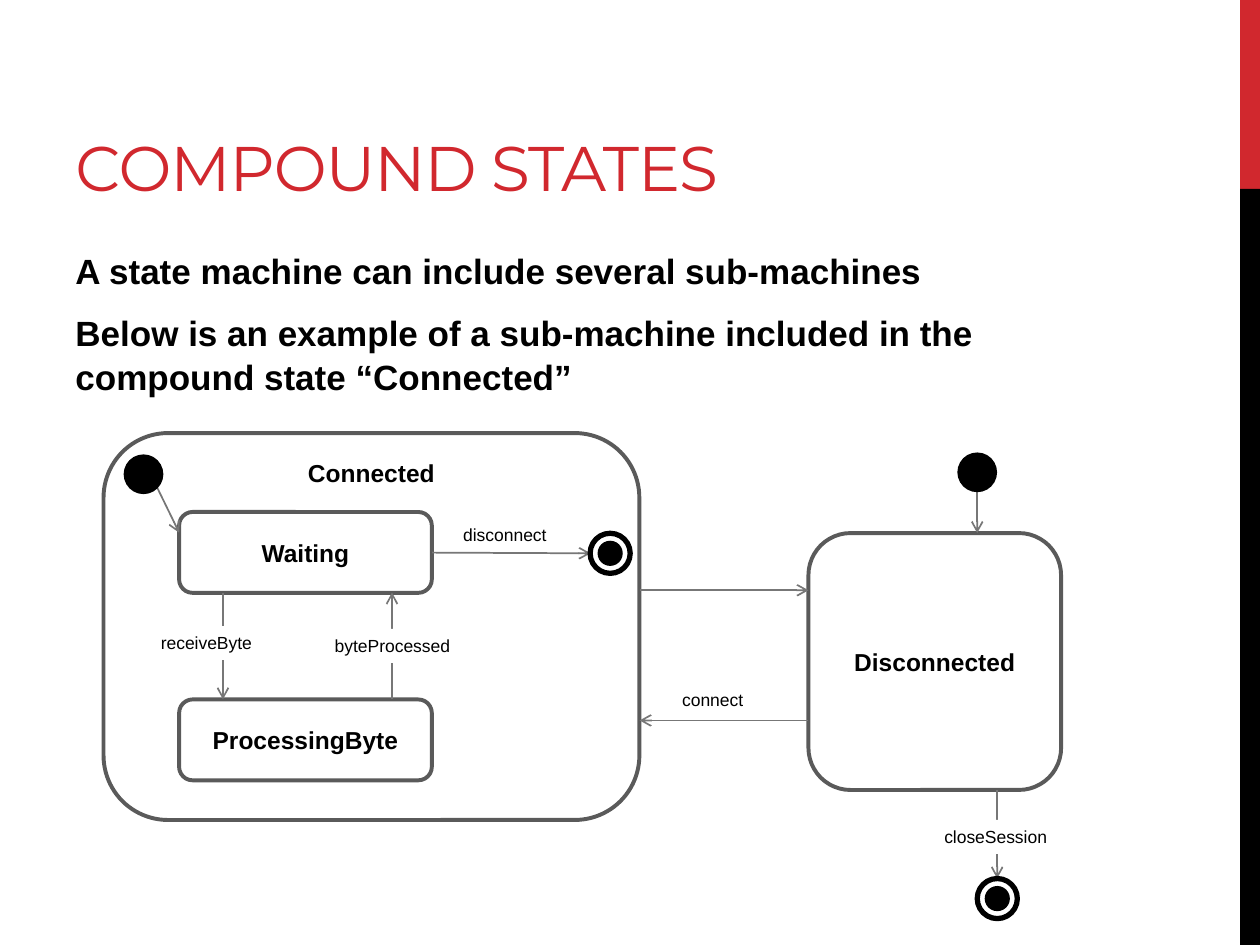
"""Build the compound states slide with its state machine diagram."""
from dataclasses import dataclass
from typing import NamedTuple

from lxml.etree import SubElement
from pptx import Presentation
from pptx.dml.color import RGBColor
from pptx.enum.shapes import MSO_CONNECTOR, MSO_SHAPE
from pptx.enum.text import MSO_ANCHOR, PP_ALIGN
from pptx.oxml.ns import qn
from pptx.util import Pt


@dataclass(frozen=True)
class Theme:
    red: str = "D1282E"
    black: str = "000000"
    white: str = "FFFFFF"
    edge: str = "5A5A5A"
    arrow: str = "777777"
    font: str = "Arial"
    head_font: str = "Montserrat"
    head: int = 36
    body: int = 20
    state: int = 14
    label: int = 10


class State(NamedTuple):
    name: str
    left: float
    top: float
    width: float
    height: float
    anchor: MSO_ANCHOR = MSO_ANCHOR.MIDDLE


class Label(NamedTuple):
    text: str
    left: float
    top: float
    width: float
    filled: bool = True


class Arrow(NamedTuple):
    x1: float
    y1: float
    x2: float
    y2: float


class Spot(NamedTuple):
    x: float
    y: float


THEME = Theme()
LABEL_HEIGHT = 19.4
START_SIZE, RING_SIZE, CORE_SIZE = 22.7, 22.9, 14.4

STATES = [
    State("Connected", 59.2, 247.5, 306.2, 221.1, MSO_ANCHOR.TOP),
    State("Waiting", 102.4, 292.6, 144.4, 46.2),
    State("ProcessingByte", 102.4, 399.7, 144.4, 46.2),
    State("Disconnected", 462, 304.6, 144.4, 146.8),
]
ARROWS = [
    Arrow(127.4, 338.6, 127.4, 399.6),
    Arrow(224, 399.6, 224, 338.6),
    Arrow(247, 315.8, 337.5, 316.2),
    Arrow(365.5, 337.3, 462, 337.3),
    Arrow(462, 411.7, 365.5, 411.7),
    Arrow(558.4, 281.3, 558.4, 304.6),
    Arrow(569.8, 451.4, 569.8, 502),
    Arrow(90, 279, 102.4, 304.4),
]
LABELS = [
    Label("receiveByte", 84.8, 357.8, 76.3),
    Label("byteProcessed", 184.2, 359.4, 90.7),
    Label("disconnect", 257.6, 296, 61.9, False),
    Label("connect", 382.7, 390.2, 61.9, False),
    Label("closeSession", 532.5, 468.6, 82.8),
]
STARTS = [Spot(558.4, 269.9), Spot(82, 271)]
ENDS = [Spot(348.7, 316.2), Spot(569.9, 513.5)]


def tint(code: str) -> RGBColor:
    return RGBColor.from_string(code)


def write(shape, *texts: str, size: int, font: str = THEME.font,
          color: str = THEME.black, bold: bool = False,
          align=PP_ALIGN.LEFT, anchor=MSO_ANCHOR.TOP, wrap: bool = True,
          before: float = 0, after: float = 0, pitch: float = 1,
          track: int = 0) -> None:
    frame = shape.text_frame
    frame.word_wrap = wrap
    frame.vertical_anchor = anchor
    for i, text in enumerate(texts):
        para = frame.add_paragraph() if i else frame.paragraphs[0]
        para.alignment = align
        para.line_spacing = pitch
        para.space_before = Pt(before if i else 0)
        para.space_after = Pt(after)
        run = para.add_run()
        run.text = text
        run.font.name = font
        run.font.size = Pt(size)
        run.font.bold = bold
        run.font.color.rgb = tint(color)
        if track:
            run.font._element.set("spc", str(track))


def draw_shape(slide, kind, left: float, top: float, width: float,
               height: float, fill: str = "", edge: str = "",
               weight: float = 0):
    shape = slide.shapes.add_shape(kind, Pt(left), Pt(top), Pt(width), Pt(height))
    shape.shadow.inherit = False
    if fill:
        shape.fill.solid()
        shape.fill.fore_color.rgb = tint(fill)
    else:
        shape.fill.background()
    if edge:
        shape.line.color.rgb = tint(edge)
        shape.line.width = Pt(weight)
    else:
        shape.line.fill.background()
    return shape


def draw_text(slide, left: float, top: float, width: float, height: float):
    return slide.shapes.add_textbox(Pt(left), Pt(top), Pt(width), Pt(height))


def draw_state(slide, state: State) -> None:
    shape = draw_shape(slide, MSO_SHAPE.ROUNDED_RECTANGLE, *state[1:5],
                       fill=THEME.white, edge=THEME.edge, weight=2.25)
    write(shape, state.name, size=THEME.state, bold=True,
          align=PP_ALIGN.CENTER, anchor=state.anchor)


def draw_arrow(slide, arrow: Arrow) -> None:
    line = slide.shapes.add_connector(MSO_CONNECTOR.STRAIGHT, *map(Pt, arrow))
    line.line.color.rgb = tint(THEME.arrow)
    line.line.width = Pt(1)
    props = line._element.spPr
    SubElement(props.find(qn("a:ln")), qn("a:tailEnd"), type="arrow")
    SubElement(props, qn("a:effectLst"))


def draw_label(slide, label: Label) -> None:
    box = draw_text(slide, label.left, label.top, label.width, LABEL_HEIGHT)
    if label.filled:
        box.fill.solid()
        box.fill.fore_color.rgb = tint(THEME.white)
    write(box, label.text, size=THEME.label, wrap=False)


def draw_dot(slide, spot: Spot, size: float, **style) -> None:
    draw_shape(slide, MSO_SHAPE.OVAL, spot.x - size / 2, spot.y - size / 2,
               size, size, **style)


def main() -> None:
    deck = Presentation()
    deck.slide_width, deck.slide_height = Pt(720), Pt(540)
    slide = deck.slides.add_slide(deck.slide_layouts[6])
    draw_shape(slide, MSO_SHAPE.RECTANGLE, 708.6, 0, 11.4, 108, fill=THEME.red)
    draw_shape(slide, MSO_SHAPE.RECTANGLE, 708.6, 108, 11.4, 432, fill=THEME.black)
    write(draw_text(slide, 36, 12, 546, 108), "COMPOUND STATES",
          size=THEME.head, font=THEME.head_font, color=THEME.red,
          anchor=MSO_ANCHOR.BOTTOM, track=-60)
    write(draw_text(slide, 36, 138, 600, 92),
          "A state machine can include several sub-machines",
          "Below is an example of a sub-machine included in the "
          "compound state “Connected”",
          size=THEME.body, bold=True, before=4, after=6, pitch=1.05)
    for state in STATES:
        draw_state(slide, state)
    for arrow in ARROWS:
        draw_arrow(slide, arrow)
    for label in LABELS:
        draw_label(slide, label)
    for spot in STARTS:
        draw_dot(slide, spot, START_SIZE, fill=THEME.black)
    for spot in ENDS:
        draw_dot(slide, spot, RING_SIZE, edge=THEME.black, weight=3)
        draw_dot(slide, spot, CORE_SIZE, fill=THEME.black)
    deck.save("out.pptx")


if __name__ == "__main__":
    main()
